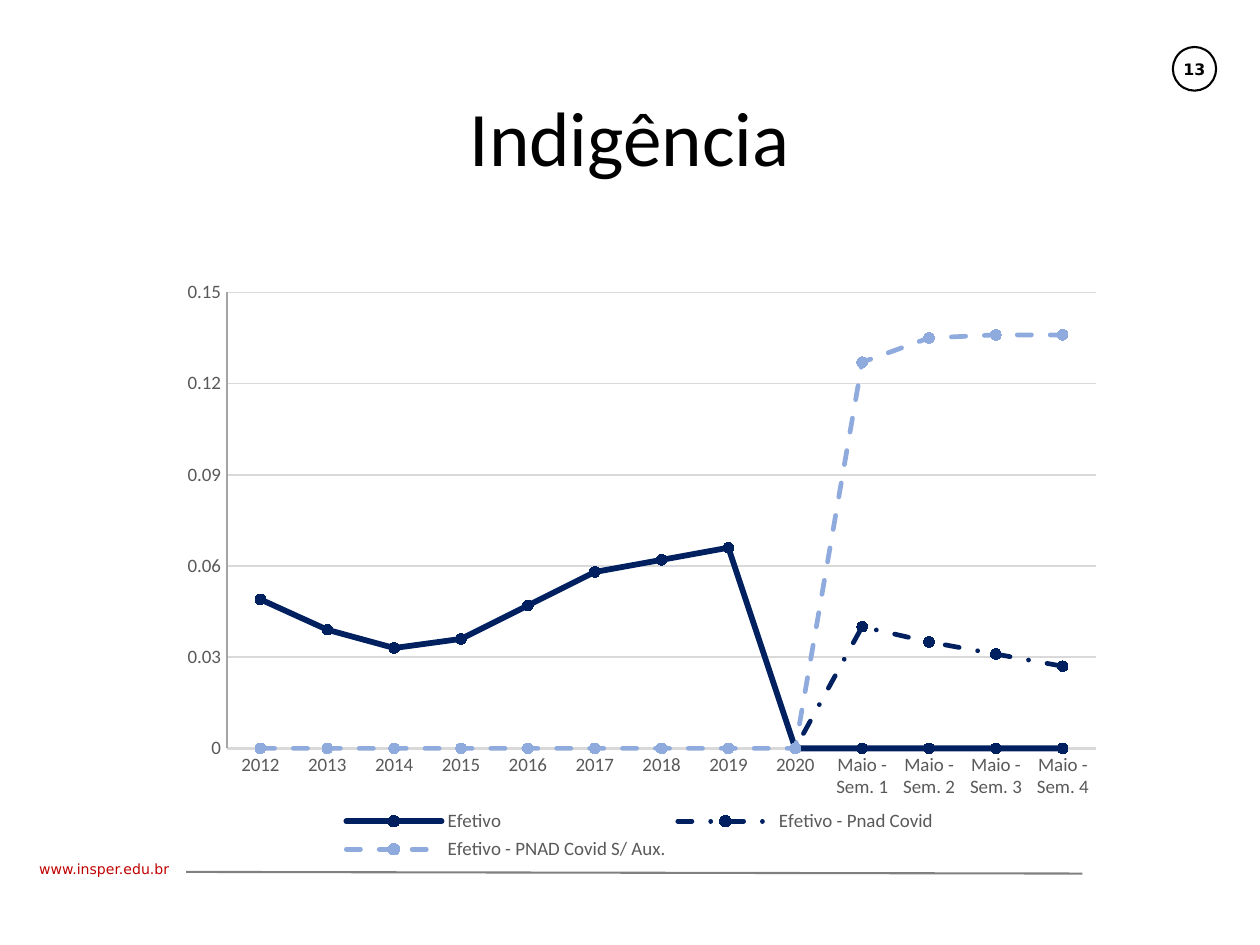
from lxml.etree import SubElement
from pptx import Presentation
from pptx.chart.data import CategoryChartData
from pptx.dml.color import RGBColor
from pptx.enum.chart import XL_CHART_TYPE, XL_LEGEND_POSITION, XL_MARKER_STYLE, XL_TICK_MARK
from pptx.enum.dml import MSO_LINE
from pptx.enum.shapes import MSO_CONNECTOR, MSO_SHAPE
from pptx.enum.text import MSO_ANCHOR, PP_ALIGN
from pptx.oxml.ns import qn
from pptx.util import Pt

COLORS = {
    "black": "000000",
    "red": "C00000",
    "footer rule": "808080",
    "label": "595959",
    "grid": "D9D9D9",
    "value axis": "A5A5A5",
    "navy": "002060",
    "light blue": "8FAADC",
}

YEARS = [str(year) for year in range(2012, 2021)]
WEEKS = [f"Maio - Sem. {week}" for week in range(1, 5)]
ANNUAL_RATES = [0.049, 0.039, 0.033, 0.036, 0.047, 0.058, 0.062, 0.066, None]
SERIES = [
    ("Efetivo", ANNUAL_RATES + [None] * 4, "navy", 2.75, MSO_LINE.SOLID),
    ("Efetivo - Pnad Covid", ANNUAL_RATES + [0.04, 0.035, 0.031, 0.027],
     "navy", 2.25, MSO_LINE.DASH_DOT),
    ("Efetivo - PNAD Covid S/ Aux.", [None] * 9 + [0.127, 0.135, 0.136, 0.136],
     "light blue", 2.25, MSO_LINE.DASH),
]
PLOT_AREA = {"x": 0.071, "y": 0.094, "w": 0.904, "h": 0.72}


def rgb(name):
    return RGBColor.from_string(COLORS[name])


def set_all(target, values):
    for name, value in values.items():
        setattr(target, name, value)


def set_font(font, size, color, face="Calibri", bold=False):
    set_all(font, {"size": Pt(size), "name": face, "bold": bold})
    font.color.rgb = rgb(color)


def set_line(line, color, width):
    line.color.rgb = rgb(color)
    line.width = Pt(width)


def add_title(slide, text):
    title = slide.shapes.title
    set_all(title, {"left": Pt(41), "top": Pt(23.8), "width": Pt(517.7), "height": Pt(87.1)})
    title.text_frame.text = text
    title.text_frame.vertical_anchor = MSO_ANCHOR.MIDDLE
    paragraph = title.text_frame.paragraphs[0]
    set_all(paragraph, {"alignment": PP_ALIGN.CENTER, "line_spacing": 0.9})
    set_font(paragraph.font, 36.7, "black")


def add_footer(slide, address):
    box = slide.shapes.add_textbox(Pt(11.5), Pt(406), Pt(90), Pt(15.1))
    box.text_frame.text = address
    set_font(box.text_frame.paragraphs[0].font, 6.7, "red", "DejaVu Sans")
    rule = slide.shapes.add_connector(
        MSO_CONNECTOR.STRAIGHT, Pt(88.6), Pt(415.2), Pt(515.5), Pt(416))
    set_line(rule.line, "footer rule", 1)
    SubElement(rule.line._get_or_add_ln().getparent(), qn("a:effectLst"))


def add_page_number(slide, number):
    badge = slide.shapes.add_shape(MSO_SHAPE.OVAL, Pt(558.5), Pt(22.4), Pt(20.6), Pt(20.8))
    badge.shadow.inherit = False
    badge.fill.background()
    set_line(badge.line, "black", 1)
    frame = badge.text_frame
    set_all(frame, {"margin_left": 0, "margin_right": 0, "margin_top": 0, "margin_bottom": 0,
                    "word_wrap": False, "vertical_anchor": MSO_ANCHOR.MIDDLE})
    frame.text = number
    frame.paragraphs[0].alignment = PP_ALIGN.CENTER
    set_font(frame.paragraphs[0].font, 7.5, "black", "DejaVu Sans", True)


def format_axis(axis, color, width):
    set_all(axis, {"major_tick_mark": XL_TICK_MARK.NONE, "minor_tick_mark": XL_TICK_MARK.NONE})
    set_font(axis.tick_labels.font, 9, "label")
    set_line(axis.format.line, color, width)


def format_series(series, color, width, dash):
    series.smooth = False
    set_line(series.format.line, color, width)
    series.format.line.dash_style = dash
    series.format.line._get_or_add_ln().set("cap", "rnd")
    marker = series.marker
    set_all(marker, {"style": XL_MARKER_STYLE.CIRCLE, "size": 5})
    marker.format.fill.solid()
    marker.format.fill.fore_color.rgb = rgb(color)
    set_line(marker.format.line, color, 0.75)


def place_plot_area(chart):
    """Fix the inner plot area and draw empty values as zero."""
    plot_area = chart._chartSpace.find(".//" + qn("c:plotArea"))
    layout = plot_area.find(qn("c:layout"))
    if layout is None:
        layout = SubElement(plot_area, qn("c:layout"))
        plot_area.insert(0, layout)
    manual = SubElement(layout, qn("c:manualLayout"))
    settings = {"layoutTarget": "inner", "xMode": "edge", "yMode": "edge", **PLOT_AREA}
    for tag, value in settings.items():
        SubElement(manual, qn(f"c:{tag}")).set("val", str(value))
    chart._chartSpace.find(".//" + qn("c:dispBlanksAs")).set("val", "zero")


def add_rate_chart(slide):
    rates = CategoryChartData()
    rates.categories = YEARS + WEEKS
    for name, values, *_ in SERIES:
        rates.add_series(name, values)
    chart = slide.shapes.add_chart(
        XL_CHART_TYPE.LINE_MARKERS, Pt(75.6), Pt(110.9), Pt(457.9), Pt(301.7), rates).chart
    set_font(chart.font, 10, "black")
    chart.has_title = False
    chart.plots[0].vary_by_categories = False

    format_axis(chart.category_axis, "grid", 1.5)
    format_axis(chart.value_axis, "value axis", 0.75)
    set_all(chart.value_axis, {"minimum_scale": 0, "maximum_scale": 0.15, "major_unit": 0.03,
                               "has_major_gridlines": True})
    set_line(chart.value_axis.major_gridlines.format.line, "grid", 0.75)

    chart.has_legend = True
    set_all(chart.legend, {"position": XL_LEGEND_POSITION.BOTTOM, "include_in_layout": False})
    set_font(chart.legend.font, 9, "label")

    for series, (_, _, color, width, dash) in zip(chart.plots[0].series, SERIES):
        format_series(series, color, width, dash)
    place_plot_area(chart)


def main():
    deck = Presentation()
    set_all(deck, {"slide_width": Pt(600), "slide_height": Pt(450)})
    slide = deck.slides.add_slide(deck.slide_layouts.get_by_name("Title Only"))
    add_footer(slide, "www.insper.edu.br")
    add_page_number(slide, "13")
    add_title(slide, "Indigência")
    add_rate_chart(slide)
    deck.save("out.pptx")


if __name__ == "__main__":
    main()
